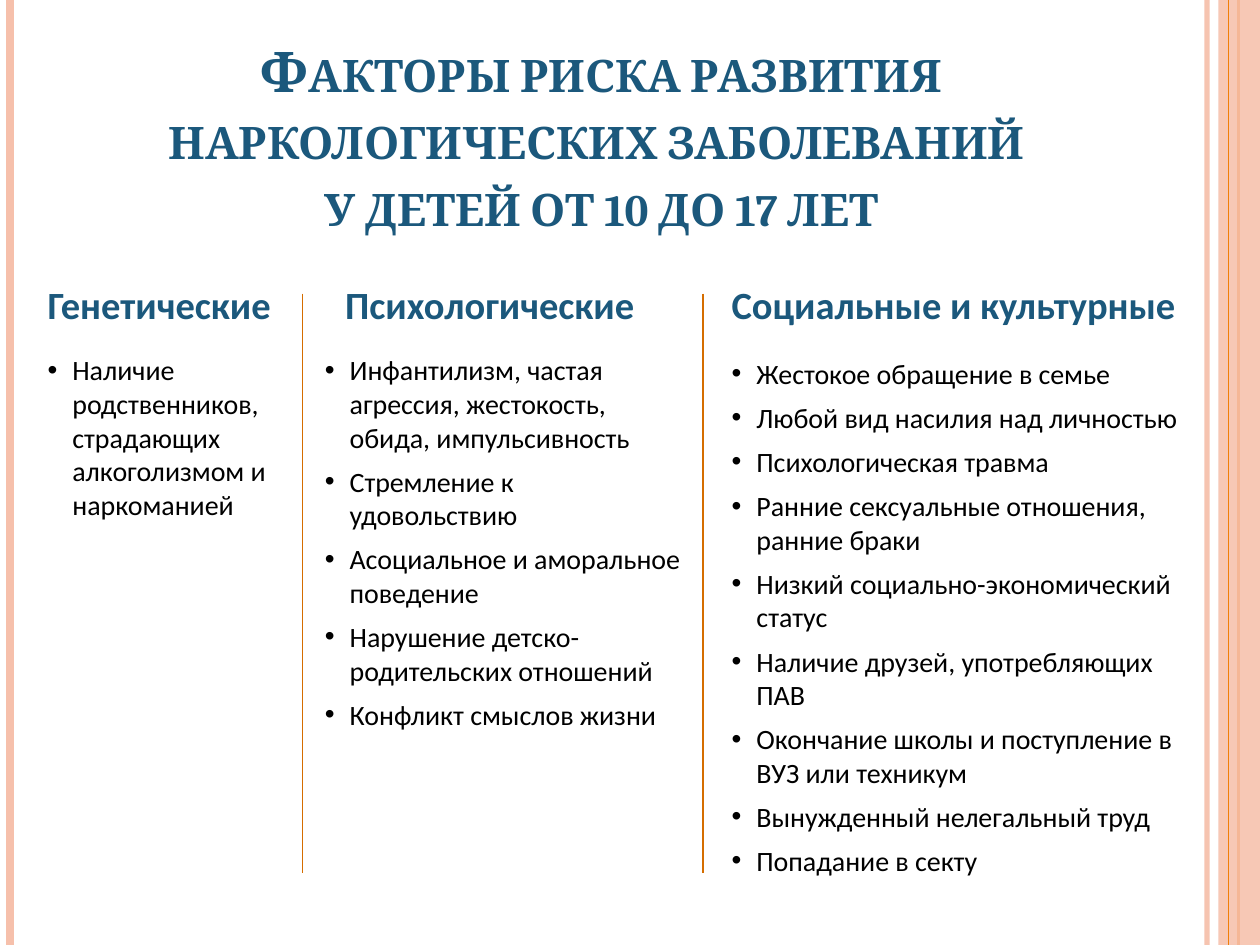
from lxml import etree
from pptx import Presentation
from pptx import util as u
from pptx.dml.color import RGBColor
from pptx.enum import shapes, text
from pptx.oxml.ns import qn

BLUE = RGBColor(0x1B, 0x58, 0x7C)
BLACK = RGBColor(0, 0, 0)
PEACH = RGBColor(0xF6, 0xC0, 0xAB)
ORANGE = RGBColor(0xF0, 0x7F, 0x09)
DARK_ORANGE = RGBColor(0xD5, 0x6D, 0x00)
INDENT = u.Cm(0.5)


def write(para, words, *, font="Calibri", size=16, color=BLACK, bold=False,
          bullet=False, before=0):
    para.space_before = u.Pt(before)
    span = para.add_run()
    span.text = words
    span.font.name, span.font.size = font, u.Pt(size)
    span.font.color.rgb, span.font.bold = color, bold
    if bullet:
        props = para._p.get_or_add_pPr()
        props.set("marL", str(INDENT))
        props.set("indent", str(-INDENT))
        etree.SubElement(props, qn("a:buFont")).set("typeface", "Arial")
        etree.SubElement(props, qn("a:buChar")).set("char", "•")
    return span


def add_rule(x, top, bottom, color, width):
    rule = page.shapes.add_connector(
        shapes.MSO_CONNECTOR.STRAIGHT, u.Cm(x), u.Cm(top), u.Cm(x), u.Cm(bottom))
    rule.line.color.rgb, rule.line.width = color, u.Pt(width)
    etree.SubElement(rule._element.spPr, qn("a:effectLst"))
    return rule


deck = Presentation()
deck.slide_width, deck.slide_height = u.Cm(25.4), u.Cm(19.05)
page = deck.slides.add_slide(deck.slide_layouts[5])

# Decorative side stripes
inner_rule = add_rule(24.33, 0, 19.05, PEACH, 3)
add_rule(0.2, 0, 19.05, PEACH, 4.5)
add_rule(24.97, 0, 19.05, ORANGE, 1.5)
band = page.shapes.add_shape(shapes.MSO_SHAPE.RECTANGLE,
                             u.Cm(24.56), 0, u.Cm(0.84), u.Cm(19.05))
band.shadow.inherit = False
band.fill.solid()
band.fill.fore_color.rgb = PEACH
band.line.fill.background()
add_rule(24.77, 0, 19.05, ORANGE, 0.75)
for stripe, opacity in ((inner_rule, 93), (band, 87)):
    tint = next(stripe._element.spPr.iter(qn("a:srgbClr")))
    etree.SubElement(tint, qn("a:alpha")).set("val", str(opacity * 1000))

# Title in small capitals
title = page.shapes.title
title.left, title.top = u.Cm(1.75), u.Cm(0.74)
title.width, title.height = u.Cm(20.75), u.Cm(4.19)
frame = title.text_frame
frame.auto_size = text.MSO_AUTO_SIZE.NONE
frame.vertical_anchor = text.MSO_ANCHOR.BOTTOM
heading = frame.paragraphs[0]
heading.alignment = text.PP_ALIGN.CENTER
for number, words in enumerate(("Факторы риска развития наркологических заболеваний ",
                                "у детей от 10 до 17 лет")):
    if number:
        heading.add_line_break()
    span = write(heading, words, font="Cambria", size=32, color=BLUE, bold=True)
    span.font._element.set("cap", "small")

# Columns: heading, heading left and width, list left, top, width and height, items
columns = [
    ("Генетические", 0.71, 5.08, 0.71, 6.99, 5.99, 3.68, [
        "Наличие родственников, страдающих алкоголизмом и наркоманией"]),
    ("Психологические", 6.71, 6.4, 6.3, 6.99, 7.67, 10.69, [
        "Инфантилизм, частая агрессия, жестокость, обида, импульсивность",
        "Стремление к удовольствию",
        "Асоциальное и аморальное поведение",
        "Нарушение детско-родительских отношений",
        "Конфликт смыслов жизни"]),
    ("Социальные и культурные", 14.5, 9.58, 14.5, 7.06, 9.6, 10.85, [
        "Жестокое обращение в семье",
        "Любой вид насилия над личностью",
        "Психологическая травма",
        "Ранние сексуальные отношения, ранние браки",
        "Низкий социально-экономический статус",
        "Наличие друзей, употребляющих ПАВ",
        "Окончание школы и поступление в ВУЗ или техникум",
        "Вынужденный нелегальный труд",
        "Попадание в секту"]),
]
for name, name_left, name_width, left, top, width, height, items in columns:
    box = page.shapes.add_textbox(u.Cm(name_left), u.Cm(5.54), u.Cm(name_width), u.Cm(1.19))
    box.text_frame.word_wrap = False
    write(box.text_frame.paragraphs[0], name, size=22, color=BLUE, bold=True)

    box = page.shapes.add_textbox(u.Cm(left), u.Cm(top), u.Cm(width), u.Cm(height))
    frame = box.text_frame
    frame.word_wrap = True
    for number, item in enumerate(items):
        para = frame.add_paragraph() if number else frame.paragraphs[0]
        write(para, item, bullet=True, before=6 if number else 0)

# Column dividers
for x in (6.1, 14.17):
    add_rule(x, 5.92, 17.6, DARK_ORANGE, 1)

deck.save("out.pptx")
